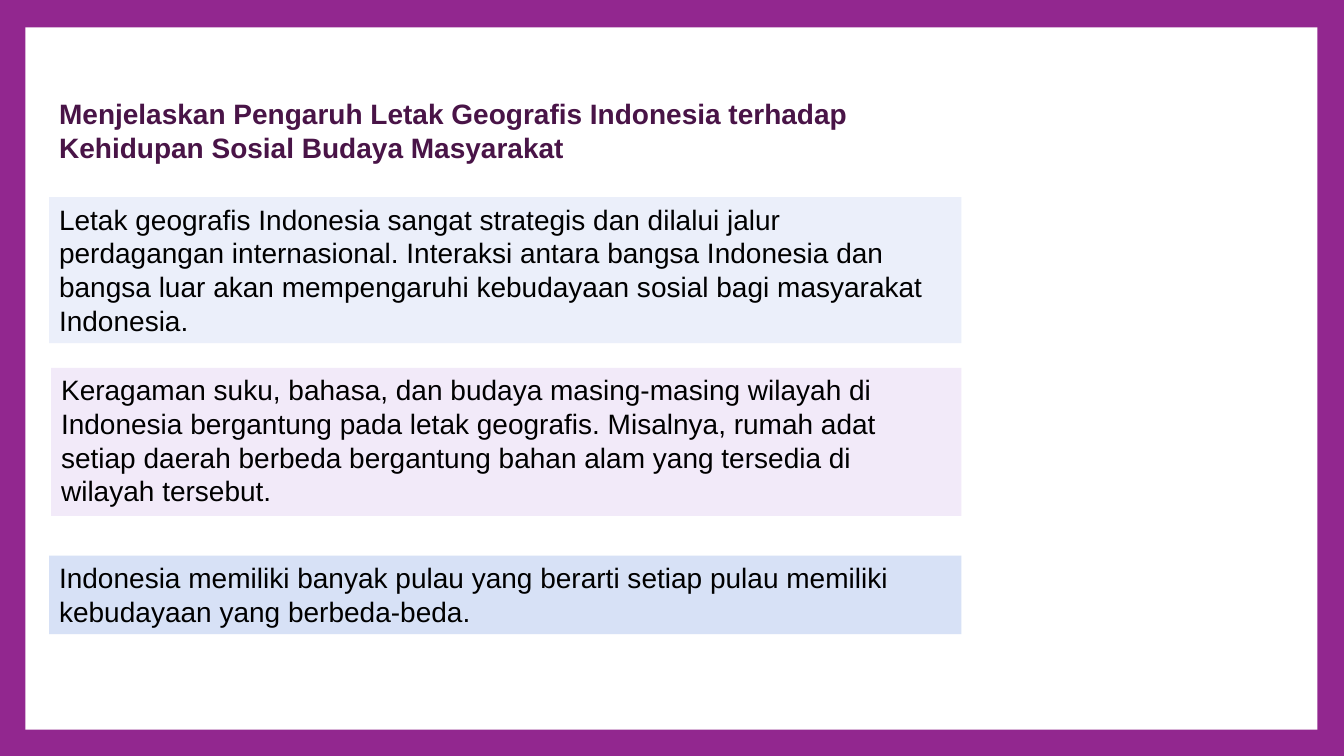
"""Build the slide on how Indonesia's location shapes its social and cultural life."""
from dataclasses import dataclass

from lxml import etree
from pptx import Presentation
from pptx.dml.color import RGBColor
from pptx.enum.shapes import MSO_SHAPE
from pptx.enum.text import MSO_ANCHOR, MSO_AUTO_SIZE, PP_ALIGN
from pptx.oxml.ns import qn
from pptx.shapes.autoshape import Shape
from pptx.slide import Slide
from pptx.util import Cm, Pt

RECTANGLE = MSO_SHAPE.RECTANGLE
TOP = MSO_ANCHOR.TOP
GROW = MSO_AUTO_SIZE.SHAPE_TO_FIT_TEXT
LEFT = PP_ALIGN.LEFT

PURPLE = RGBColor(0x92, 0x27, 0x8F)
PLUM = RGBColor(0x49, 0x14, 0x47)
WHITE = RGBColor(0xFF, 0xFF, 0xFF)
BLACK = RGBColor(0x00, 0x00, 0x00)
PALE_BLUE = RGBColor(0xBD, 0xCD, 0xF1)
LILAC = RGBColor(0xD7, 0xBC, 0xED)
SKY_BLUE = RGBColor(0x9B, 0xB4, 0xE9)


@dataclass(frozen=True)
class Area:
    """A rectangle on the slide, in centimetres."""
    left: float
    top: float
    width: float
    height: float

    def lengths(self) -> tuple[Cm, Cm, Cm, Cm]:
        """Return left, top, width and height as lengths."""
        return Cm(self.left), Cm(self.top), Cm(self.width), Cm(self.height)


@dataclass(frozen=True)
class Statement:
    """A tinted panel with one statement."""
    area: Area
    tint: RGBColor
    opacity: int
    wording: str


PAGE = Area(0.64, 0.69, 32.56, 17.7)
HEADING_AREA = Area(1.24, 2.31, 21.41, 1.96)
HEADING = (
    "Menjelaskan Pengaruh Letak Geografis Indonesia terhadap "
    "Kehidupan Sosial Budaya Masyarakat"
)
STATEMENTS = (
    Statement(
        Area(1.24, 4.97, 22.99, 3.68), PALE_BLUE, 30,
        "Letak geografis Indonesia sangat strategis dan dilalui jalur "
        "perdagangan internasional. Interaksi antara bangsa Indonesia dan "
        "bangsa luar akan mempengaruhi kebudayaan sosial bagi masyarakat "
        "Indonesia.",
    ),
    Statement(
        Area(1.29, 9.27, 22.94, 3.73), LILAC, 30,
        "Keragaman suku, bahasa, dan budaya masing-masing wilayah di "
        "Indonesia bergantung pada letak geografis. Misalnya, rumah adat "
        "setiap daerah berbeda bergantung bahan alam yang tersedia di "
        "wilayah tersebut.",
    ),
    Statement(
        Area(1.24, 14, 22.99, 1.98), SKY_BLUE, 40,
        "Indonesia memiliki banyak pulau yang berarti setiap pulau memiliki "
        "kebudayaan yang berbeda-beda.",
    ),
)


def add_panel(slide: Slide, area: Area, colour: RGBColor, opacity: int = 100) -> Shape:
    """Add a borderless rectangle whose opacity is given in percent."""
    panel = slide.shapes.add_shape(RECTANGLE, *area.lengths())
    panel.shadow.inherit = False
    panel.line.fill.background()
    panel.fill.solid()
    panel.fill.fore_color.rgb = colour
    if opacity < 100:
        tint = panel.fill._xPr.find(f"{qn('a:solidFill')}/{qn('a:srgbClr')}")
        etree.SubElement(tint, qn("a:alpha"), val=str(opacity * 1000))
    return panel


def write(holder: Shape, wording: str, colour: RGBColor, bold: bool = False) -> None:
    """Write one left-aligned paragraph into a shape."""
    frame = holder.text_frame
    for name, value in {"word_wrap": True, "vertical_anchor": TOP, "auto_size": GROW}.items():
        setattr(frame, name, value)
    paragraph = frame.paragraphs[0]
    paragraph.alignment = LEFT
    run = paragraph.add_run()
    run.text = wording
    for name, value in {"name": "Arial", "size": Pt(20), "bold": bold}.items():
        setattr(run.font, name, value)
    run.font.color.rgb = colour


def main() -> None:
    """Build and save the presentation."""
    presentation = Presentation()
    presentation.slide_width = Cm(33.87)
    presentation.slide_height = Cm(19.05)
    slide = presentation.slides.add_slide(presentation.slide_layouts[6])
    slide.background.fill.solid()
    slide.background.fill.fore_color.rgb = PURPLE

    add_panel(slide, PAGE, WHITE)
    heading = slide.shapes.add_textbox(*HEADING_AREA.lengths())
    write(heading, HEADING, PLUM, bold=True)
    for statement in STATEMENTS:
        panel = add_panel(slide, statement.area, statement.tint, statement.opacity)
        write(panel, statement.wording, BLACK)

    presentation.save("out.pptx")


if __name__ == "__main__":
    main()
